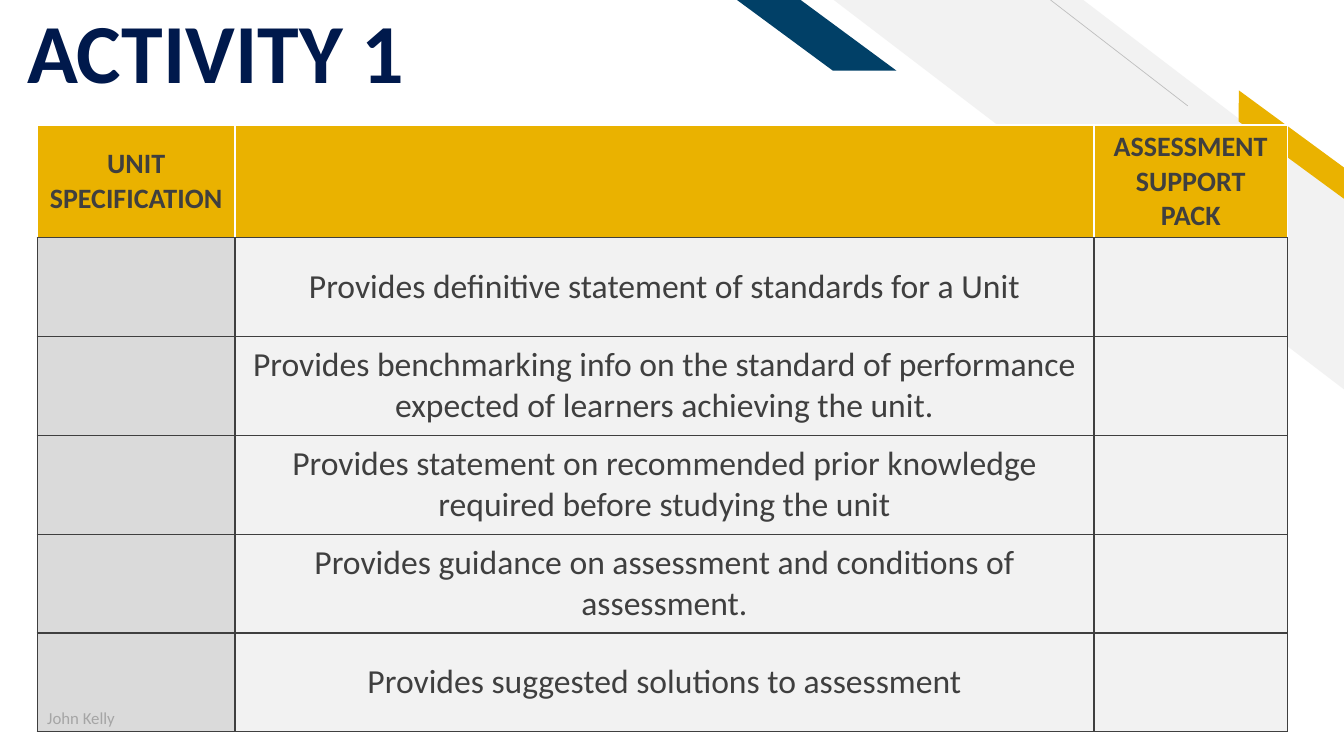
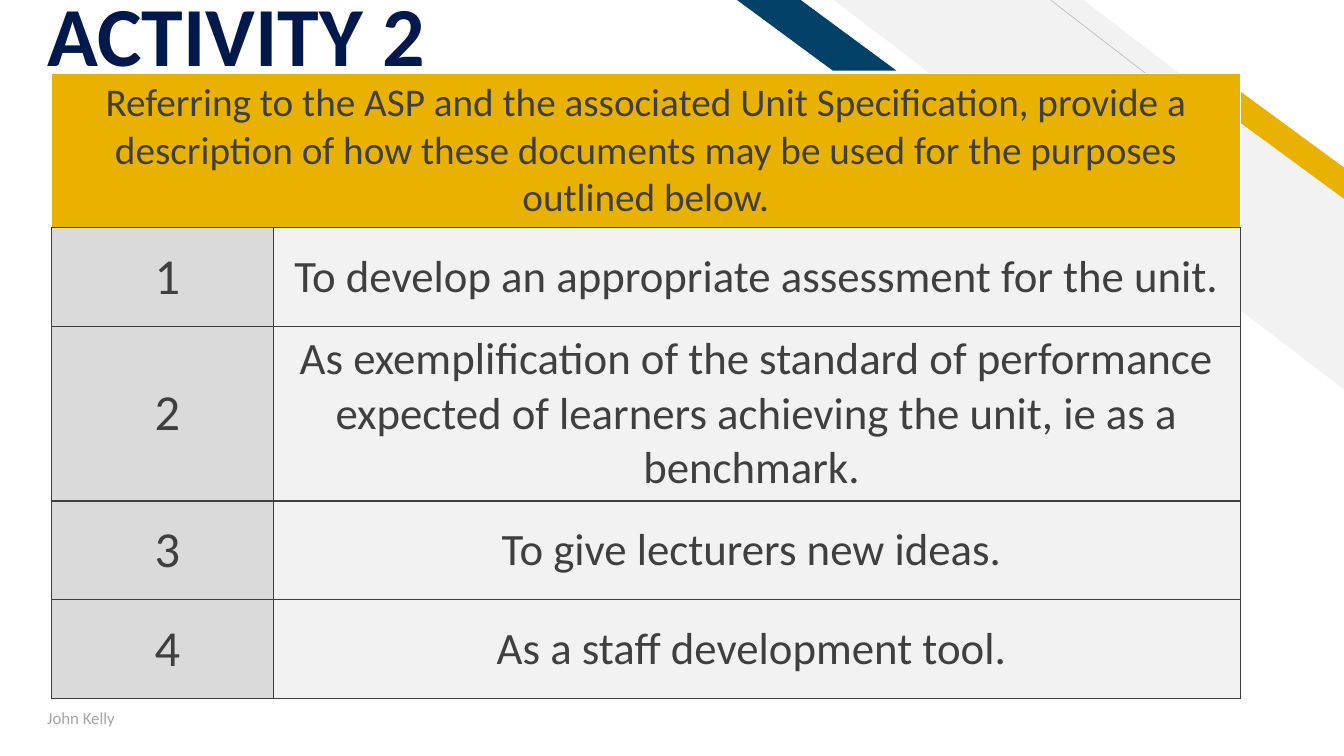
"""Build two activity slides that share a diagonal banner, title style and footer."""
from dataclasses import dataclass
from typing import Optional

from lxml import etree
from pptx import Presentation
from pptx import util as u
from pptx.dml.color import RGBColor
from pptx.enum import shapes, text
from pptx.oxml.ns import qn


@dataclass(frozen=True)
class Theme:
    font: str = "Calibri"
    navy: str = "00194C"
    blue: str = "014067"
    gold: str = "EAB200"
    ink: str = "3F3F3F"
    label_grey: str = "DADADA"
    pale_grey: str = "F2F2F2"
    hairline: str = "BFBFBF"
    footer_grey: str = "A5A5A5"
    white: str = "FFFFFF"
    title_size: int = 60
    footer_size: int = 12


@dataclass(frozen=True)
class Box:
    left: float
    top: float
    width: float
    height: float

    def lengths(self) -> tuple:
        return tuple(u.Inches(n) for n in (self.left, self.top, self.width, self.height))


@dataclass(frozen=True)
class Stripe:
    preset: shapes.MSO_SHAPE
    box: Box
    slant: float
    color: str
    rotation: float = 0


@dataclass(frozen=True)
class Style:
    size: int
    color: str
    bold: bool = False


@dataclass(frozen=True)
class Activity:
    title: str
    title_box: Box
    grid_left: float
    grid_top: float
    columns: tuple
    heights: tuple
    header: tuple
    rows: tuple
    header_style: Style
    label_style: Style
    body_style: Style
    label_inset: float = 0.1


THEME = Theme()
ROW_HEIGHT = 0.98
FOOTER = "John Kelly"
FOOTER_BOX = Box(0.37, 6.92, 4.5, 0.4)
BACK_STRIPE = Stripe(shapes.MSO_SHAPE.DIAGONAL_STRIPE, Box(8.27, 0, 5.07, 3.87), 0.512, THEME.pale_grey)
FRONT_STRIPES = (
    Stripe(shapes.MSO_SHAPE.PARALLELOGRAM, Box(12.07, 1.31, 1.48, 0.25), 0.72, THEME.gold, 36.3),
    Stripe(shapes.MSO_SHAPE.PARALLELOGRAM, Box(7.31, 0, 1.58, 0.7), 1.356, THEME.blue),
)

ACTIVITIES = (
    Activity(
        title="ACTIVITY 1",
        title_box=Box(0.17, 0.31, 4.21, 0.7),
        grid_left=0.37,
        grid_top=1.24,
        columns=(1.96, 8.52, 1.92),
        heights=(1.12,) + (ROW_HEIGHT,) * 5,
        header=("UNIT SPECIFICATION", "", "ASSESSMENT SUPPORT PACK"),
        rows=tuple(
            ("", purpose, "")
            for purpose in (
                "Provides definitive statement of standards for a Unit",
                "Provides benchmarking info on the standard of performance expected of learners achieving the unit.",
                "Provides statement on recommended prior knowledge required before studying the unit",
                "Provides guidance on assessment and conditions of assessment.",
                "Provides suggested solutions to assessment",
            )
        ),
        header_style=Style(20, THEME.ink, True),
        label_style=Style(24, THEME.ink),
        body_style=Style(24, THEME.ink),
    ),
    Activity(
        title="ACTIVITY 2",
        title_box=Box(0.37, 0.14, 4.21, 0.7),
        grid_left=0.51,
        grid_top=0.73,
        columns=(2.2, 9.59),
        heights=(1.53, ROW_HEIGHT, 1.73, ROW_HEIGHT, ROW_HEIGHT),
        header=(
            "Referring to the ASP and the associated Unit Specification, provide a description "
            "of how these documents may be used for the purposes outlined below.",
        ),
        rows=(
            ("1", "To develop an appropriate assessment for the unit."),
            (
                "2",
                "As exemplification of the standard of performance expected of learners "
                "achieving the unit, ie as a benchmark. ",
            ),
            ("3", "To give lecturers new ideas. "),
            ("4", "As a staff development tool. "),
        ),
        header_style=Style(28, THEME.ink),
        label_style=Style(36, THEME.ink),
        body_style=Style(32, THEME.ink),
        label_inset=0.2,
    ),
)


def rgb(color: str) -> RGBColor:
    return RGBColor.from_string(color)


def write(frame, wording: str, style: Style, align: Optional[text.PP_ALIGN] = None) -> None:
    frame.text = wording
    frame.word_wrap = True
    for paragraph in frame.paragraphs:
        paragraph.alignment = align
        for run in paragraph.runs:
            run.font.name = THEME.font
            run.font.size = u.Pt(style.size)
            run.font.bold = style.bold
            run.font.color.rgb = rgb(style.color)


def add_stripe(slide, stripe: Stripe) -> None:
    band = slide.shapes.add_shape(stripe.preset, *stripe.box.lengths())
    band.adjustments[0] = stripe.slant
    band.rotation = stripe.rotation
    band.shadow.inherit = False
    band.fill.solid()
    band.fill.fore_color.rgb = rgb(stripe.color)
    band.line.fill.background()
    band._element.spPr.find(qn("a:xfrm")).set("flipH", "1")


def add_banner(slide) -> None:
    add_stripe(slide, BACK_STRIPE)
    hairline = slide.shapes.add_connector(
        shapes.MSO_CONNECTOR.STRAIGHT,
        u.Inches(11.78), u.Inches(1.05), u.Inches(10.42), u.Inches(0),
    )
    hairline.line.color.rgb = rgb(THEME.hairline)
    hairline.line.width = u.Pt(0.5)
    etree.SubElement(hairline._element.spPr, qn("a:effectLst"))
    for stripe in FRONT_STRIPES:
        add_stripe(slide, stripe)


def add_title(slide, activity: Activity) -> None:
    frame = slide.shapes.add_textbox(*activity.title_box.lengths()).text_frame
    write(frame, activity.title, Style(THEME.title_size, THEME.navy, True))
    frame.vertical_anchor = text.MSO_ANCHOR.BOTTOM
    frame.margin_bottom = 0
    frame.paragraphs[0].line_spacing = 0.9


def add_footer(slide) -> None:
    frame = slide.shapes.add_textbox(*FOOTER_BOX.lengths()).text_frame
    write(frame, FOOTER, Style(THEME.footer_size, THEME.footer_grey))
    frame.vertical_anchor = text.MSO_ANCHOR.MIDDLE


def set_borders(cell, sides: str, bottom: str) -> None:
    properties = cell._tc.get_or_add_tcPr()
    edges = (("a:lnL", sides), ("a:lnR", sides), ("a:lnT", sides), ("a:lnB", bottom))
    for position, (tag, color) in enumerate(edges):
        edge = etree.Element(qn(tag), w=str(u.Pt(1)))
        fill = etree.SubElement(edge, qn("a:solidFill"))
        etree.SubElement(fill, qn("a:srgbClr"), val=color)
        properties.insert(position, edge)


def fill_cell(cell, wording: str, style: Style, fill: str, sides: str) -> None:
    write(cell.text_frame, wording, style, text.PP_ALIGN.CENTER)
    cell.vertical_anchor = text.MSO_ANCHOR.MIDDLE
    cell.fill.solid()
    cell.fill.fore_color.rgb = rgb(fill)
    set_borders(cell, sides, THEME.ink)


def add_grid(slide, activity: Activity) -> None:
    heights = activity.heights
    box = Box(activity.grid_left, activity.grid_top, sum(activity.columns), sum(heights))
    grid = slide.shapes.add_table(len(heights), len(activity.columns), *box.lengths()).table
    grid.horz_banding = False
    for column, width in zip(grid.columns, activity.columns):
        column.width = u.Inches(width)
    for row, height in zip(grid.rows, heights):
        row.height = u.Inches(height)

    last = len(activity.columns) - 1
    headings = activity.header + ("",) * (last + 1 - len(activity.header))
    for index, heading in enumerate(headings):
        fill_cell(grid.cell(0, index), heading, activity.header_style, THEME.gold, THEME.white)
    if len(activity.header) == 1:
        grid.cell(0, 0).merge(grid.cell(0, last))

    for line, entries in enumerate(activity.rows, start=1):
        for index, entry in enumerate(entries):
            style = activity.body_style if index else activity.label_style
            fill = THEME.pale_grey if index else THEME.label_grey
            fill_cell(grid.cell(line, index), entry, style, fill, THEME.ink)
        grid.cell(line, 0).margin_left = u.Inches(activity.label_inset)


def main() -> None:
    deck = Presentation()
    deck.slide_width, deck.slide_height = u.Inches(13.33), u.Inches(7.5)
    for activity in ACTIVITIES:
        slide = deck.slides.add_slide(deck.slide_layouts[6])
        add_banner(slide)
        add_title(slide, activity)
        add_grid(slide, activity)
        add_footer(slide)
    deck.save("out.pptx")


if __name__ == "__main__":
    main()
